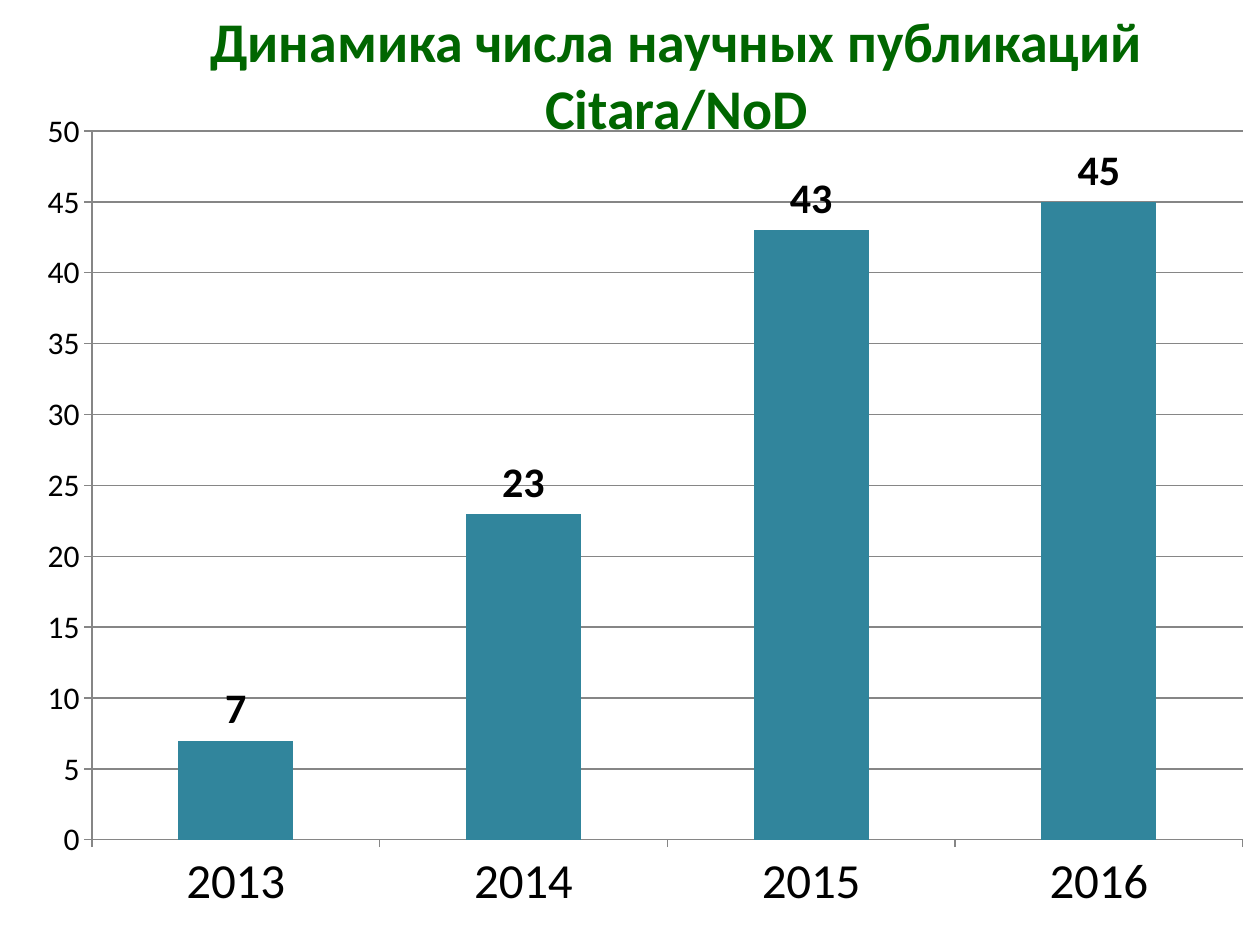
from pptx import Presentation
from pptx.chart.data import CategoryChartData
from pptx.dml.color import RGBColor
from pptx.enum.chart import XL_CHART_TYPE as ChartType, XL_LABEL_POSITION as LabelPos
from pptx.enum.chart import XL_TICK_MARK as Tick
from pptx.enum.text import PP_ALIGN as Align
from pptx.util import Inches, Pt

GREEN = RGBColor(0x00, 0x66, 0x00)
TEAL = RGBColor(0x31, 0x85, 0x9C)
BLACK = RGBColor(0x00, 0x00, 0x00)
GRAY = RGBColor(0x86, 0x86, 0x86)
FONT = "Calibri"
WIDTH, HEIGHT = Inches(10), Inches(7.5)
PUBLICATIONS = {"2013": 7, "2014": 23, "2015": 43, "2016": 45}


def box(left, top, width, height):
    """Turn shares of the slide's size into a position and size."""
    return (int(left * WIDTH), int(top * HEIGHT),
            int(width * WIDTH), int(height * HEIGHT))


def set_font(font, size, color=BLACK, bold=False):
    """Apply the slide's typeface with a size, colour and weight."""
    font.name, font.size, font.bold = FONT, Pt(size), bold
    font.color.rgb = color


def add_title(slide, text, place):
    """Add the centred heading."""
    tf = slide.shapes.add_textbox(*place).text_frame
    tf.word_wrap = True
    p = tf.paragraphs[0]
    p.text = text
    p.alignment = Align.CENTER
    set_font(p.font, 32, GREEN, True)


def style_axis(axis, size):
    """Style an axis line, its ticks and its labels."""
    axis.major_tick_mark, axis.minor_tick_mark = Tick.OUTSIDE, Tick.NONE
    axis.format.line.color.rgb = GRAY
    axis.format.line.width = Pt(0.75)
    set_font(axis.tick_labels.font, size)


def add_column_chart(slide, values, place):
    """Add the column chart with a value above each column."""
    data = CategoryChartData()
    data.categories = list(values)
    data.add_series("Series 1", list(values.values()))
    chart = slide.shapes.add_chart(ChartType.COLUMN_CLUSTERED, *place, data).chart
    chart.has_title = chart.has_legend = False
    set_font(chart.font, 10)
    style_axis(chart.category_axis, 28)

    axis = chart.value_axis
    style_axis(axis, 18)
    axis.minimum_scale, axis.maximum_scale, axis.major_unit = 0, 50, 5
    axis.has_major_gridlines = True
    axis.major_gridlines.format.line.color.rgb = GRAY
    axis.major_gridlines.format.line.width = Pt(0.75)

    plot = chart.plots[0]
    plot.gap_width = 150
    plot.vary_by_categories = False
    fill = plot.series[0].format.fill
    fill.solid()
    fill.fore_color.rgb = TEAL
    labels = plot.series[0].data_labels
    labels.show_value = True
    labels.position = LabelPos.OUTSIDE_END
    set_font(labels.font, 24, bold=True)


def main():
    """Build and save the slide."""
    prs = Presentation()
    prs.slide_width, prs.slide_height = WIDTH, HEIGHT
    slide = prs.slides.add_slide(prs.slide_layouts[6])
    add_title(slide, "Динамика числа научных публикаций Citara/NoD",
              box(0.125, 0, 0.824, 0.08))
    add_column_chart(slide, PUBLICATIONS, box(0.018, 0.101, 0.988, 0.881))
    prs.save("out.pptx")


if __name__ == "__main__":
    main()
